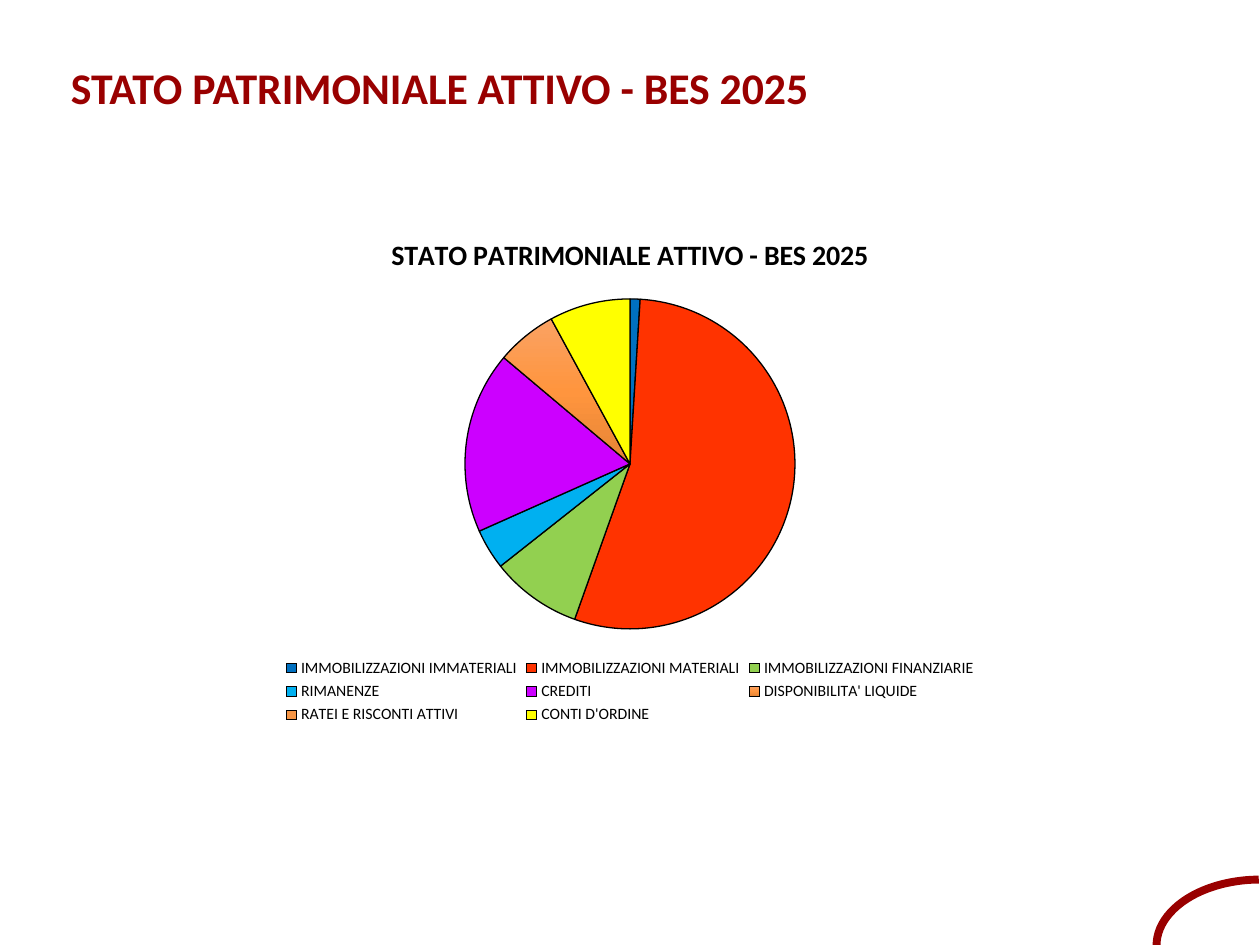
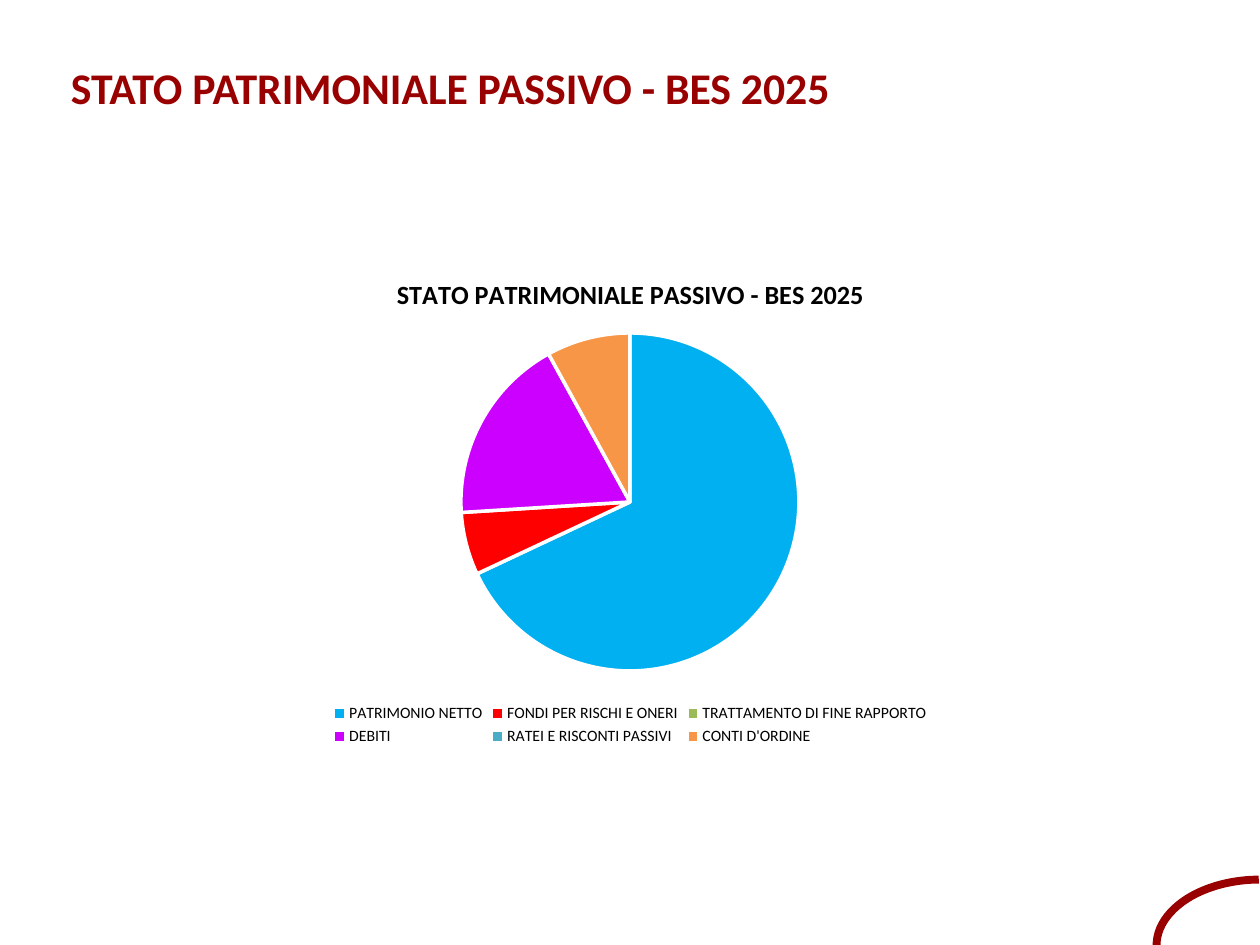
from copy import deepcopy
from dataclasses import dataclass

from lxml import etree
from pptx import Presentation
from pptx import util as u
from pptx.chart.data import CategoryChartData
from pptx.dml.color import RGBColor
from pptx.enum import chart as charts, shapes, text
from pptx.oxml.ns import qn

PX_PER_INCH = 126


@dataclass(frozen=True)
class Theme:
    font: str = "Calibri"
    accent: str = "990000"
    ink: str = "000000"
    paper: str = "FFFFFF"
    title_size: int = 25
    chart_size: int = 10
    legend_size: int = 9
    arc_width: float = 4.5


THEME = Theme()
LIQUIDITY_GRADIENT = ("FAA263", "FF953E", "E58435")

# Each item: category, percentage, colour (a tuple of colours is a gradient).
ASSETS = [
    ("IMMOBILIZZAZIONI IMMATERIALI", 1, "0070C0"),
    ("IMMOBILIZZAZIONI MATERIALI", 55, "FF3300"),
    ("IMMOBILIZZAZIONI FINANZIARIE", 9, "92D050"),
    ("RIMANENZE", 4, "00B0F0"),
    ("CREDITI", 18, "CC00FF"),
    ("DISPONIBILITA' LIQUIDE", 6, LIQUIDITY_GRADIENT),
    ("RATEI E RISCONTI ATTIVI", 0, "F79646"),
    ("CONTI D'ORDINE", 8, "FFFF00"),
]
LIABILITIES = [
    ("PATRIMONIO NETTO", 68, "00B0F0"),
    ("FONDI PER RISCHI E ONERI", 6, "FF0000"),
    ("TRATTAMENTO DI FINE RAPPORTO", 0, "9BBB59"),
    ("DEBITI", 18, "CC00FF"),
    ("RATEI E RISCONTI PASSIVI", 0, "4BACC6"),
    ("CONTI D'ORDINE", 8, "F79646"),
]


def px(length):
    return u.Emu(round(length * 914400 / PX_PER_INCH))


def rgb(code):
    return RGBColor.from_string(code)


def style_font(font, size, color, bold=False):
    font.name = THEME.font
    font.size = u.Pt(size)
    font.bold = bold
    font.color.rgb = rgb(color)


def place_title(slide, heading, box):
    title = slide.shapes.title
    title.left, title.top, title.width, title.height = map(px, box)
    title.fill.solid()
    title.fill.fore_color.rgb = rgb(THEME.paper)
    color = title.fill._xPr.find(".//" + qn("a:srgbClr"))
    etree.SubElement(color, qn("a:alpha"), val="50000")

    frame = title.text_frame
    frame.auto_size = text.MSO_AUTO_SIZE.NONE
    frame.vertical_anchor = text.MSO_ANCHOR.TOP
    frame.margin_left, frame.margin_top = px(71), px(10)
    frame.margin_right, frame.margin_bottom = 0, px(5)
    line = frame.paragraphs[0]
    line.alignment = text.PP_ALIGN.LEFT
    line.line_spacing = 0.93
    run = line.add_run()
    run.text = heading
    style_font(run.font, THEME.title_size, THEME.accent, bold=True)


def add_corner_arc(slide, box):
    arc = slide.shapes.add_shape(shapes.MSO_SHAPE.ARC, *map(px, box))
    arc.adjustments[0] = 162
    arc.adjustments[1] = 215.34
    arc.rotation = 270
    arc.shadow.inherit = False
    arc.fill.background()
    arc.line.color.rgb = rgb(THEME.accent)
    arc.line.width = u.Pt(THEME.arc_width)


def fill_gradient(fill, colors):
    """Fill from top to bottom with evenly spaced colours."""
    fill.gradient()
    fill.gradient_angle = 270
    stops = fill._xPr.find(".//" + qn("a:gsLst"))
    for _ in colors[2:]:
        stops.insert(1, deepcopy(stops[0]))
    for index, (stop, color) in enumerate(zip(fill.gradient_stops, colors)):
        stop.position = index / (len(colors) - 1)
        stop.color.rgb = rgb(color)


def set_pie_area(chart, box, pie):
    """Fix the pie at (left, top, diameter), measured inside the chart box."""
    left, top, diameter = pie
    _, _, width, height = box
    plot_area = chart._chartSpace.find(".//" + qn("c:plotArea"))
    for old in plot_area.findall(qn("c:layout")):
        plot_area.remove(old)
    layout = etree.Element(qn("c:layout"))
    plot_area.insert(0, layout)
    manual = etree.SubElement(layout, qn("c:manualLayout"))
    settings = {
        "layoutTarget": "inner", "xMode": "edge", "yMode": "edge",
        "x": left / width, "y": top / height,
        "w": diameter / width, "h": diameter / height,
    }
    for tag, value in settings.items():
        val = value if isinstance(value, str) else f"{value:.4f}"
        etree.SubElement(manual, qn("c:" + tag), val=val)


def add_balance_pie(slide, heading, items, box, pie, heading_size, border):
    data = CategoryChartData()
    data.categories = [name for name, _, _ in items]
    data.add_series("Series 1", [value for _, value, _ in items])
    chart = slide.shapes.add_chart(
        charts.XL_CHART_TYPE.PIE, *map(px, box), data).chart
    style_font(chart.font, THEME.chart_size, THEME.ink)

    chart.has_title = True
    run = chart.chart_title.text_frame.paragraphs[0].add_run()
    run.text = heading
    style_font(run.font, heading_size, THEME.ink, bold=True)

    chart.has_legend = True
    chart.legend.position = charts.XL_LEGEND_POSITION.BOTTOM
    chart.legend.include_in_layout = False
    style_font(chart.legend.font, THEME.legend_size, THEME.ink)

    plot = chart.plots[0]
    plot.vary_by_categories = True
    border_color, border_width = border
    for index, (_, _, color) in enumerate(items):
        slice_format = plot.series[0].points[index].format
        if isinstance(color, tuple):
            fill_gradient(slice_format.fill, color)
        else:
            slice_format.fill.solid()
            slice_format.fill.fore_color.rgb = rgb(color)
        slice_format.line.color.rgb = rgb(border_color)
        slice_format.line.width = u.Pt(border_width)
    set_pie_area(chart, box, pie)


def add_balance_slide(deck, heading, items, **pie_style):
    slide = deck.slides.add_slide(deck.slide_layouts.get_by_name("Title Only"))
    add_corner_arc(slide, (1194, 842, 132, 207))
    place_title(slide, heading, (0, 55, 1188, 101))
    add_balance_pie(slide, heading, items, **pie_style)


def main():
    deck = Presentation()
    deck.slide_width, deck.slide_height = px(1260), px(945)
    add_balance_slide(
        deck, "STATO PATRIMONIALE ATTIVO - BES 2025", ASSETS,
        box=(164, 214, 932, 515), pie=(301, 85, 330),
        heading_size=16, border=(THEME.ink, 0.75))
    add_balance_slide(
        deck, "STATO PATRIMONIALE PASSIVO - BES 2025", LIABILITIES,
        box=(194, 255, 873, 496), pie=(267, 78, 338),
        heading_size=15, border=(THEME.paper, 2))
    deck.save("out.pptx")


if __name__ == "__main__":
    main()
